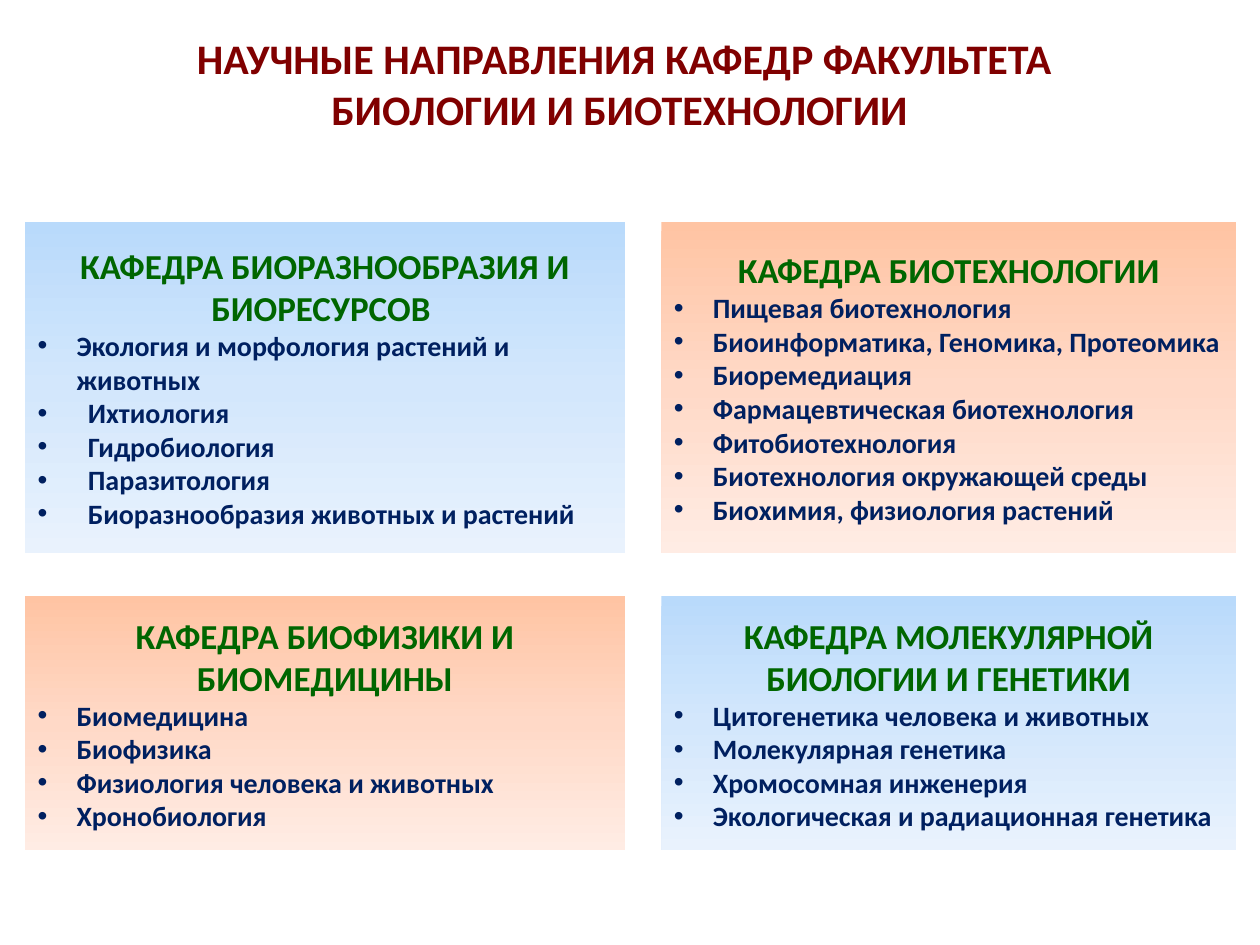
import copy

import pptx
import pptx.dml.color
import pptx.enum.shapes
import pptx.enum.text
import pptx.oxml
import pptx.oxml.ns
import pptx.util

COLORS = {"title": "800000", "heading": "006600", "item": "002060"}
GRADIENTS = {
    "blue": ["B9DAFB", "D3E7FC", "E9F2FD"],
    "orange": ["FFC4A3", "FFD9C7", "FFECE4"],
}
inch = pptx.util.Inches
qn = pptx.oxml.ns.qn
ALIGN = pptx.enum.text.PP_ALIGN


def write(p, text, size, color, align=ALIGN.LEFT, hang=0):
    """Write bold text in a paragraph; hang is the bullet's indent in inches."""
    p.alignment = align
    r = p.add_run()
    r.text = text
    r.font.name = "Calibri"
    r.font.size = pptx.util.Pt(size)
    r.font.bold = True
    r.font.color.rgb = pptx.dml.color.RGBColor.from_string(COLORS[color])
    if hang:
        pPr = p._p.get_or_add_pPr()
        pPr.set("marL", str(inch(hang)))
        pPr.set("indent", str(-inch(hang)))
        pPr.append(pptx.oxml.parse_xml(
            f'<a:buFont {pptx.oxml.ns.nsdecls("a")} typeface="Arial"/>'))
        pPr.append(pptx.oxml.parse_xml(
            f'<a:buChar {pptx.oxml.ns.nsdecls("a")} char="•"/>'))


def fill_gradient(s, colors):
    """Fill a shape from top to bottom with three evenly spaced colours."""
    s.fill.gradient()
    s.fill.gradient_angle = 270
    stops = s._element.spPr.find(".//" + qn("a:gsLst"))
    stops.insert(1, copy.deepcopy(stops[0]))
    for i, (stop, color) in enumerate(zip(s.fill.gradient_stops, colors)):
        stop.position = i / 2
        stop.color.rgb = pptx.dml.color.RGBColor.from_string(color)


prs = pptx.Presentation()
prs.slide_width, prs.slide_height = inch(10), inch(7.5)
slide = prs.slides.add_slide(prs.slide_layouts[6])

# Grid of two columns (left, width) and two rows (top, height)
COLUMNS = [(0.2, 4.76), (5.25, 4.56)]
ROWS = [(1.76, 2.63), (4.73, 2.02)]

# Departments: column, row, gradient, heading, items with their indents
departments = [
    (0, 0, "blue", "КАФЕДРА БИОРАЗНООБРАЗИЯ И БИОРЕСУРСОВ ", [
        ("Экология и морфология растений и животных", 0.31),
        ("Ихтиология", 0.4),
        ("Гидробиология", 0.4),
        ("Паразитология", 0.4),
        ("Биоразнообразия животных и растений", 0.4)]),
    (0, 1, "orange", "КАФЕДРА БИОФИЗИКИ И БИОМЕДИЦИНЫ", [
        ("Биомедицина", 0.31),
        ("Биофизика", 0.31),
        ("Физиология человека и животных", 0.31),
        ("Хронобиология", 0.31)]),
    (1, 0, "orange", "КАФЕДРА БИОТЕХНОЛОГИИ", [
        ("Пищевая биотехнология", 0.31),
        ("Биоинформатика, Геномика, Протеомика", 0.31),
        ("Биоремедиация", 0.31),
        ("Фармацевтическая биотехнология", 0.31),
        ("Фитобиотехнология", 0.31),
        ("Биотехнология окружающей среды", 0.31),
        ("Биохимия, физиология растений", 0.31)]),
    (1, 1, "blue", "КАФЕДРА МОЛЕКУЛЯРНОЙ БИОЛОГИИ И ГЕНЕТИКИ", [
        ("Цитогенетика человека и животных", 0.31),
        ("Молекулярная генетика", 0.31),
        ("Хромосомная инженерия", 0.31),
        ("Экологическая и радиационная генетика", 0.31)]),
]
for col, row, gradient, heading, items in departments:
    (left, width), (top, height) = COLUMNS[col], ROWS[row]
    s = slide.shapes.add_shape(pptx.enum.shapes.MSO_SHAPE.RECTANGLE,
                               inch(left), inch(top), inch(width), inch(height))
    s.shadow.inherit = False
    s.line.fill.background()
    fill_gradient(s, GRADIENTS[gradient])
    tf = s.text_frame
    tf.word_wrap = True
    tf.vertical_anchor = pptx.enum.text.MSO_ANCHOR.MIDDLE
    write(tf.paragraphs[0], heading, 20, "heading", align=ALIGN.CENTER)
    for item, hang in items:
        write(tf.add_paragraph(), item, 16, "item", hang=hang)

# Title
s = slide.shapes.add_textbox(inch(0.77), inch(0.21), inch(8.37), inch(0.91))
tf = s.text_frame
tf.word_wrap = True
tf.auto_size = pptx.enum.text.MSO_AUTO_SIZE.SHAPE_TO_FIT_TEXT
write(tf.paragraphs[0],
      "НАУЧНЫЕ НАПРАВЛЕНИЯ КАФЕДР ФАКУЛЬТЕТА БИОЛОГИИ И БИОТЕХНОЛОГИИ ",
      24, "title", align=ALIGN.CENTER)

prs.save("out.pptx")
